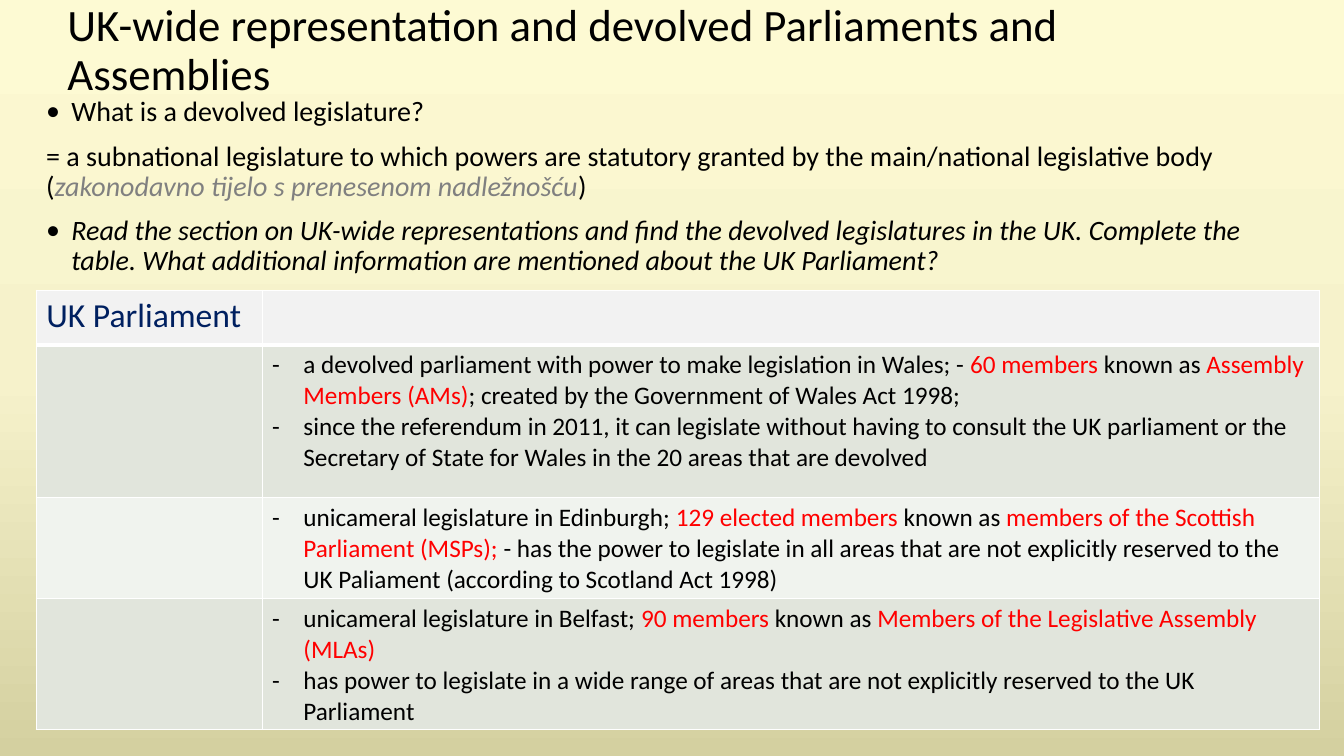
from copy import deepcopy

from lxml.etree import SubElement
from pptx import Presentation
from pptx.dml.color import RGBColor
from pptx.enum.text import MSO_ANCHOR
from pptx.oxml.ns import qn
from pptx.util import Inches, Pt

BLACK = RGBColor(0x00, 0x00, 0x00)
RED = RGBColor(0xFF, 0x00, 0x00)
GRAY = RGBColor(0x80, 0x80, 0x80)
NAVY = RGBColor(0x00, 0x20, 0x60)
WHITE = RGBColor(0xFF, 0xFF, 0xFF)
HEADER_FILL = RGBColor(0xF2, 0xF2, 0xF2)
BAND_FILLS = [RGBColor(0xE1, 0xE5, 0xDC), RGBColor(0xF0, 0xF3, 0xEE)]
BACKGROUND = [RGBColor(0xFD, 0xFA, 0xD3), RGBColor(0xF6, 0xF2, 0xCB), RGBColor(0xD4, 0xD0, 0xA0)]

# Content: a paragraph is a list of (text, run format)
PLAIN, KEY = {}, {"color": RED}
TITLE = "UK-wide representation and devolved Parliaments and Assemblies"
INTRO = [
    ("•", [("What is a devolved legislature?", PLAIN)]),
    (None, [
        ("= a subnational legislature to which powers are statutory granted by the "
         "main/national legislative body (", PLAIN),
        ("zakonodavno tijelo s prenesenom nadležnošću", {"color": GRAY, "italic": True}),
        (")", PLAIN),
    ]),
    ("•", [("Read the section on UK-wide representations and find the devolved legislatures "
            "in the UK. Complete the table. What additional information are mentioned about "
            "the UK Parliament?", {"italic": True})]),
]
HEADER = "UK Parliament"
LEGISLATURES = [
    [
        [("a devolved parliament with power to make legislation in Wales; - ", PLAIN),
         ("60 members ", KEY), ("known as ", PLAIN), ("Assembly Members (AMs)", KEY),
         ("; created by the Government of Wales Act 1998;", PLAIN)],
        [("since the referendum in 2011, it can legislate without having to consult "
          "the UK parliament or the Secretary of State for Wales in the 20 areas "
          "that are devolved", PLAIN)],
    ],
    [
        [("unicameral legislature in Edinburgh; ", PLAIN), ("129 elected members ", KEY),
         ("known as ", PLAIN), ("members of the Scottish Parliament (MSPs); ", KEY),
         ("- has the power to legislate in all areas that are not explicitly reserved to "
          "the UK Paliament (according to Scotland Act 1998)", PLAIN)],
    ],
    [
        [("unicameral legislature in Belfast; ", PLAIN), ("90 members", KEY),
         (" known as ", PLAIN), ("Members of the Legislative Assembly (MLAs)", KEY)],
        [("has power to legislate in a wide range of areas that are not explicitly "
          "reserved to the UK Parliament", PLAIN)],
    ],
]
COLUMN_WIDTHS = [2.24, 10.49]
ROW_HEIGHTS = [0.54, 1.52, 1, 1.3]


def add_text(paragraph, text, size=18, color=BLACK, italic=False):
    run = paragraph.add_run()
    run.text = text
    run.font.name = "Calibri"
    run.font.size = Pt(size)
    run.font.color.rgb = color
    run.font.italic = italic


def add_bullet(paragraph, symbol, indent):
    properties = paragraph._p.get_or_add_pPr()
    properties.set("marL", str(Inches(indent)))
    properties.set("indent", str(-Inches(indent)))
    SubElement(properties, qn("a:buFont"), typeface="Calibri")
    SubElement(properties, qn("a:buChar"), char=symbol)


def fill_paragraphs(frame, paragraphs, size, indent, spacing=None, before=0):
    for i, (symbol, runs) in enumerate(paragraphs):
        paragraph = frame.add_paragraph() if i else frame.paragraphs[0]
        paragraph.line_spacing = spacing
        paragraph.space_before = Pt(before)
        if symbol:
            add_bullet(paragraph, symbol, indent)
        for text, style in runs:
            add_text(paragraph, text, size=size, **style)


def add_frame(slide, left, top, width, height, anchor):
    frame = slide.shapes.add_textbox(*map(Inches, (left, top, width, height))).text_frame
    frame.word_wrap = True
    frame.vertical_anchor = anchor
    return frame


def style_cell(cell, fill, widths):
    properties = cell._tc.get_or_add_tcPr()
    for side, width in widths.items():
        line = SubElement(properties, qn(f"a:{side}"), w=str(Pt(width)))
        solid = SubElement(line, qn("a:solidFill"))
        SubElement(solid, qn("a:srgbClr"), val=str(WHITE))
    cell.fill.solid()
    cell.fill.fore_color.rgb = fill


prs = Presentation()
prs.slide_width, prs.slide_height = Inches(13.33), Inches(7.5)
slide = prs.slides.add_slide(prs.slide_layouts[6])

# Background gradient, light at the top
backdrop = slide.background.fill
backdrop.gradient()
backdrop.gradient_angle = 270
first_stop = backdrop.gradient_stops[0]._gs
first_stop.addnext(deepcopy(first_stop))
for i, (stop, color) in enumerate(zip(backdrop.gradient_stops, BACKGROUND)):
    stop.position = i / 2
    stop.color.rgb = color

# Title and introduction
title = add_frame(slide, 0.57, 0.19, 12.08, 0.64, MSO_ANCHOR.MIDDLE)
fill_paragraphs(title, [(None, [(TITLE, PLAIN)])], 32, 0, spacing=0.9)
intro = add_frame(slide, 0.36, 0.92, 12.73, 1.9, MSO_ANCHOR.TOP)
fill_paragraphs(intro, INTRO, 20, 0.25, spacing=0.9, before=10)

# Table of legislatures
table = slide.shapes.add_table(
    len(ROW_HEIGHTS), len(COLUMN_WIDTHS), Inches(0.36), Inches(2.88),
    Inches(sum(COLUMN_WIDTHS)), Inches(sum(ROW_HEIGHTS))).table
for column, width in zip(table.columns, COLUMN_WIDTHS):
    column.width = Inches(width)
for r, (row, height) in enumerate(zip(table.rows, ROW_HEIGHTS)):
    row.height = Inches(height)
    fill = BAND_FILLS[(r - 1) % 2] if r else HEADER_FILL
    borders = {"lnL": 1, "lnR": 1, "lnT": 3 if r == 1 else 1, "lnB": 1 if r else 3}
    for cell in row.cells:
        style_cell(cell, fill, borders)
add_text(table.cell(0, 0).text_frame.paragraphs[0], HEADER, size=24, color=NAVY)
for r, facts in enumerate(LEGISLATURES, start=1):
    fill_paragraphs(table.cell(r, 1).text_frame, [("-", runs) for runs in facts], 18, 0.31)

prs.save("out.pptx")
